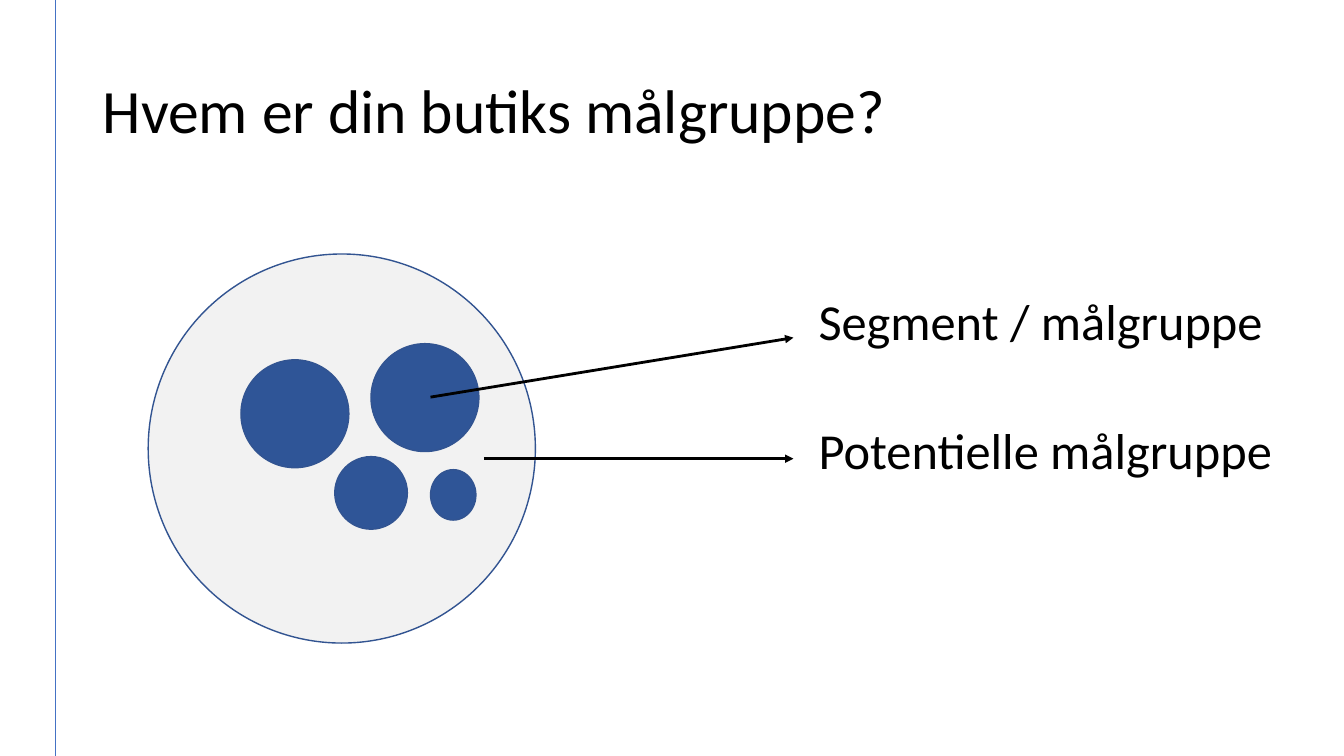
from dataclasses import dataclass

from lxml.etree import SubElement
from pptx import Presentation
from pptx.dml.color import RGBColor
from pptx.enum.shapes import MSO_CONNECTOR, MSO_SHAPE
from pptx.enum.text import MSO_ANCHOR
from pptx.oxml.ns import qn
from pptx.util import Inches, Pt


@dataclass(frozen=True)
class Theme:
    font: str = "Calibri"
    title_size: int = 44
    label_size: int = 36
    text: str = "000000"
    margin_line: str = "4472C4"
    market: str = "F2F2F2"
    segment: str = "2F5597"
    outline: str = "325491"


THEME = Theme()
SLIDE_WIDTH, SLIDE_HEIGHT = 13.33, 7.5


def add_text(slide, text, box, *, size, color=THEME.text, anchor=MSO_ANCHOR.TOP,
             wrap=False, line_spacing=1.0):
    frame = slide.shapes.add_textbox(*map(Inches, box)).text_frame
    frame.word_wrap = wrap
    frame.vertical_anchor = anchor
    paragraph = frame.paragraphs[0]
    paragraph.text = text
    paragraph.line_spacing = line_spacing
    paragraph.font.name = THEME.font
    paragraph.font.size = Pt(size)
    paragraph.font.color.rgb = RGBColor.from_string(color)


def add_line(slide, start, end, *, color, width, arrow=False):
    line = slide.shapes.add_connector(MSO_CONNECTOR.STRAIGHT, *map(Inches, (*start, *end)))
    line.line.color.rgb = RGBColor.from_string(color)
    line.line.width = Pt(width)
    if arrow:
        SubElement(line.line._get_or_add_ln(), qn("a:tailEnd"), type="triangle")
    SubElement(line._element.spPr, qn("a:effectLst"))


def add_ellipse(slide, box, *, fill):
    ellipse = slide.shapes.add_shape(MSO_SHAPE.OVAL, *map(Inches, box))
    ellipse.shadow.inherit = False
    ellipse.fill.solid()
    ellipse.fill.fore_color.rgb = RGBColor.from_string(fill)
    ellipse.line.color.rgb = RGBColor.from_string(THEME.outline)
    ellipse.line.width = Pt(1)


def add_title(slide, box):
    add_text(slide, "Hvem er din butiks målgruppe?", box, size=THEME.title_size,
             anchor=MSO_ANCHOR.MIDDLE, wrap=True, line_spacing=0.9)


def add_market(slide, box):
    """Draw the potential market as a large circle with its segments inside."""
    left, top, _, _ = box
    add_ellipse(slide, box, fill=THEME.market)
    segments = [
        (2.21, 0.89, 1.07, 1.07),
        (0.92, 1.05, 1.07, 1.07),
        (1.85, 2.01, 0.72, 0.72),
        (2.8, 2.14, 0.45, 0.5),
    ]
    for dx, dy, width, height in segments:
        add_ellipse(slide, (left + dx, top + dy, width, height), fill=THEME.segment)


def add_callouts(slide, box):
    """Point from the market to labels aligned at the right of the box."""
    left, top, width, _ = box
    label_width, label_height, arrow_gap = 4.82, 0.71, 0.15
    label_left = left + width - label_width
    callouts = [
        ("Segment / målgruppe", 0, (0, 1.11), 0.52),
        ("Potentielle målgruppe", 1.28, (0.53, 1.72), 1.72),
    ]
    for label, label_dy, (start_dx, start_dy), end_dy in callouts:
        add_line(slide, (left + start_dx, top + start_dy),
                 (label_left - arrow_gap, top + end_dy),
                 color=THEME.text, width=2, arrow=True)
        add_text(slide, label, (label_left, top + label_dy, label_width, label_height),
                 size=THEME.label_size)


def main():
    presentation = Presentation()
    presentation.slide_width = Inches(SLIDE_WIDTH)
    presentation.slide_height = Inches(SLIDE_HEIGHT)
    slide = presentation.slides.add_slide(presentation.slide_layouts[6])
    add_line(slide, (0.55, 0), (0.55, SLIDE_HEIGHT), color=THEME.margin_line, width=1.25)
    add_title(slide, (0.92, 0.4, 11.5, 1.45))
    add_market(slide, (1.47, 2.52, 3.84, 3.86))
    add_callouts(slide, (4.27, 2.83, 8.57, 1.99))
    presentation.save("out.pptx")


if __name__ == "__main__":
    main()
